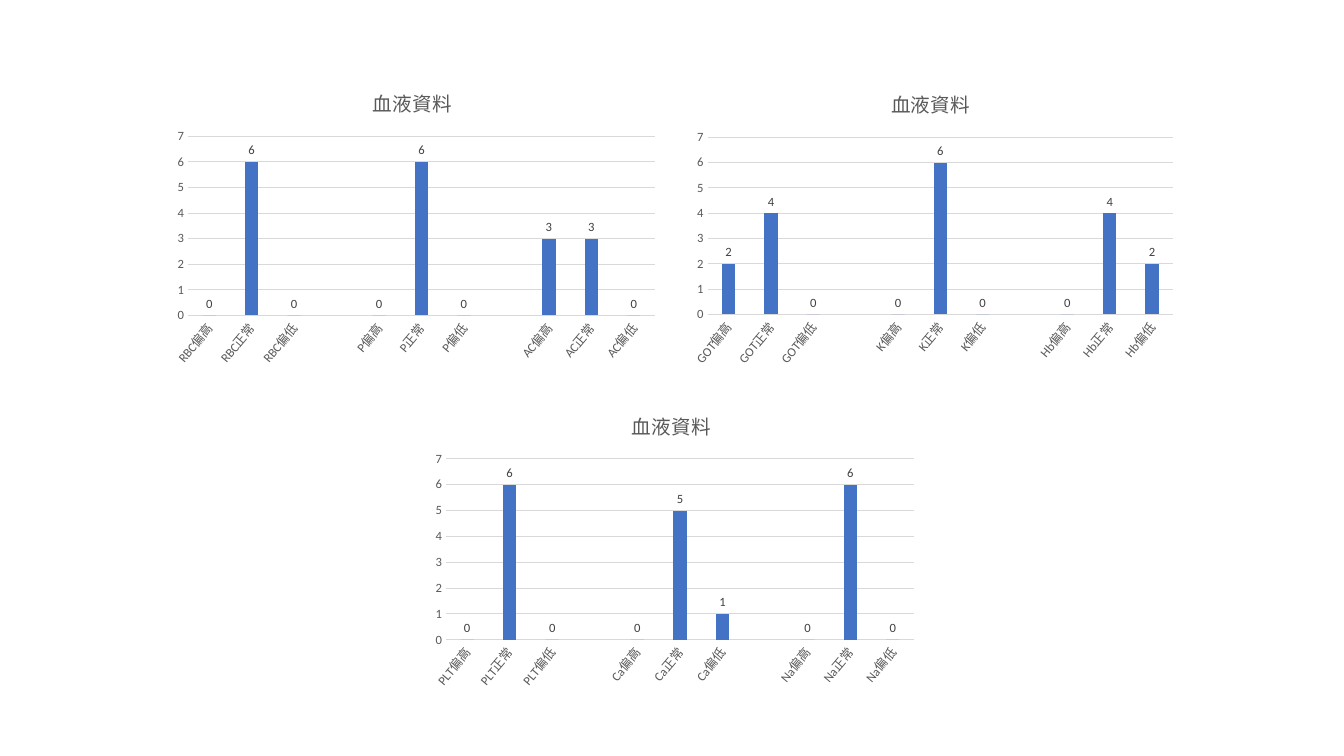
from lxml import etree
from pptx import Presentation
from pptx.chart import data
from pptx.dml.color import RGBColor
from pptx.enum import chart as chart_enum
from pptx.oxml.ns import qn
from pptx.util import Pt

LEVELS = ("偏高", "正常", "偏低")
CHART_WIDTH, CHART_HEIGHT = 360, 216
TITLE_SPOT = (148.7, 8)
LABEL_ANGLE = -50

# left, top, inner plot area within the chart (all in points), marker counts
PANELS = [
    (115.2, 51.1, (19.1, 46.3, 333.6, 128), {"RBC": (0, 6, 0), "P": (0, 6, 0), "AC": (3, 3, 0)}),
    (485.3, 51.8, (20.1, 46.3, 332.7, 126.6), {"GOT": (2, 4, 0), "K": (0, 6, 0), "Hb": (0, 4, 2)}),
    (300.2, 281.5, (18.3, 46.3, 334.5, 129.3), {"PLT": (0, 6, 0), "Ca": (0, 5, 1), "Na": (0, 6, 0)}),
]


def rgb(hex_code):
    return RGBColor.from_string(hex_code)


def place(part, index, box):
    """Lay out a chart part by hand; box is x, y and maybe width, height in points."""
    for old in part.findall(qn("c:layout")):
        part.remove(old)
    layout = etree.Element(qn("c:layout"))
    manual = etree.SubElement(layout, qn("c:manualLayout"))
    if len(box) == 4:
        etree.SubElement(manual, qn("c:layoutTarget"), val="inner")
    for side in "xy":
        etree.SubElement(manual, qn(f"c:{side}Mode"), val="edge")
    for key, length, whole in zip("xywh", box, (CHART_WIDTH, CHART_HEIGHT) * 2):
        etree.SubElement(manual, qn(f"c:{key}"), val=str(length / whole))
    part.insert(index, layout)


def blood_data(markers):
    """Chart data with an empty slot between neighbouring markers."""
    names, counts = [], []
    for marker, values in markers.items():
        if names:
            names.append("")
            counts.append(None)
        names += [marker + level for level in LEVELS]
        counts += values
    table = data.CategoryChartData()
    table.categories = names
    table.add_series("Series 1", counts)
    return table


class BloodSlide:
    FONT = "Calibri"
    BAR, GRID, MUTED, LABEL = "4472C4", "D9D9D9", "595959", "404040"

    def __init__(self, deck):
        self.slide = deck.slides.add_slide(deck.slide_layouts[6])

    def style_font(self, font, size, color):
        font.name = self.FONT
        font.size = Pt(size)
        font.bold = False
        font.color.rgb = rgb(color)

    def style_line(self, line):
        line.color.rgb = rgb(self.GRID)
        line.width = Pt(0.75)

    def columns(self, left, top, plot_box, markers):
        chart = self.slide.shapes.add_chart(
            chart_enum.XL_CHART_TYPE.COLUMN_CLUSTERED, Pt(left), Pt(top),
            Pt(CHART_WIDTH), Pt(CHART_HEIGHT), blood_data(markers)).chart
        self.style_font(chart.font, 10, "000000")
        chart.has_legend = False
        self.title(chart, "血液資料")
        self.axes(chart)
        self.bars(chart.plots[0])
        place(chart.element.find(".//" + qn("c:plotArea")), 0, plot_box)

    def title(self, chart, wording):
        chart.has_title = True
        heading = chart.chart_title.text_frame.paragraphs[0]
        heading.text = wording
        self.style_font(heading.runs[0].font, 14, self.MUTED)
        place(chart.element.find(".//" + qn("c:title")), 1, TITLE_SPOT)

    def axes(self, chart):
        markers, counts = chart.category_axis, chart.value_axis
        for axis in (markers, counts):
            axis.major_tick_mark = chart_enum.XL_TICK_MARK.NONE
            axis.minor_tick_mark = chart_enum.XL_TICK_MARK.NONE
            self.style_font(axis.tick_labels.font, 9, self.MUTED)
        self.style_line(markers.format.line)
        for body in chart.element.xpath(".//c:catAx/c:txPr/a:bodyPr"):
            body.set("rot", str(LABEL_ANGLE * 60000))
        counts.minimum_scale, counts.maximum_scale = 0, 7
        counts.major_unit = 1
        counts.format.line.fill.background()
        counts.has_major_gridlines = True
        self.style_line(counts.major_gridlines.format.line)

    def bars(self, plot):
        plot.gap_width, plot.overlap = 219, -27
        plot.vary_by_categories = False
        series = plot.series[0]
        series.format.fill.solid()
        series.format.fill.fore_color.rgb = rgb(self.BAR)
        labels = series.data_labels
        labels.show_value = True
        labels.position = chart_enum.XL_LABEL_POSITION.OUTSIDE_END
        self.style_font(labels.font, 9, self.LABEL)


def main():
    deck = Presentation()
    deck.slide_width, deck.slide_height = Pt(960), Pt(540)
    blood = BloodSlide(deck)
    for panel in PANELS:
        blood.columns(*panel)
    deck.save("out.pptx")


if __name__ == "__main__":
    main()
